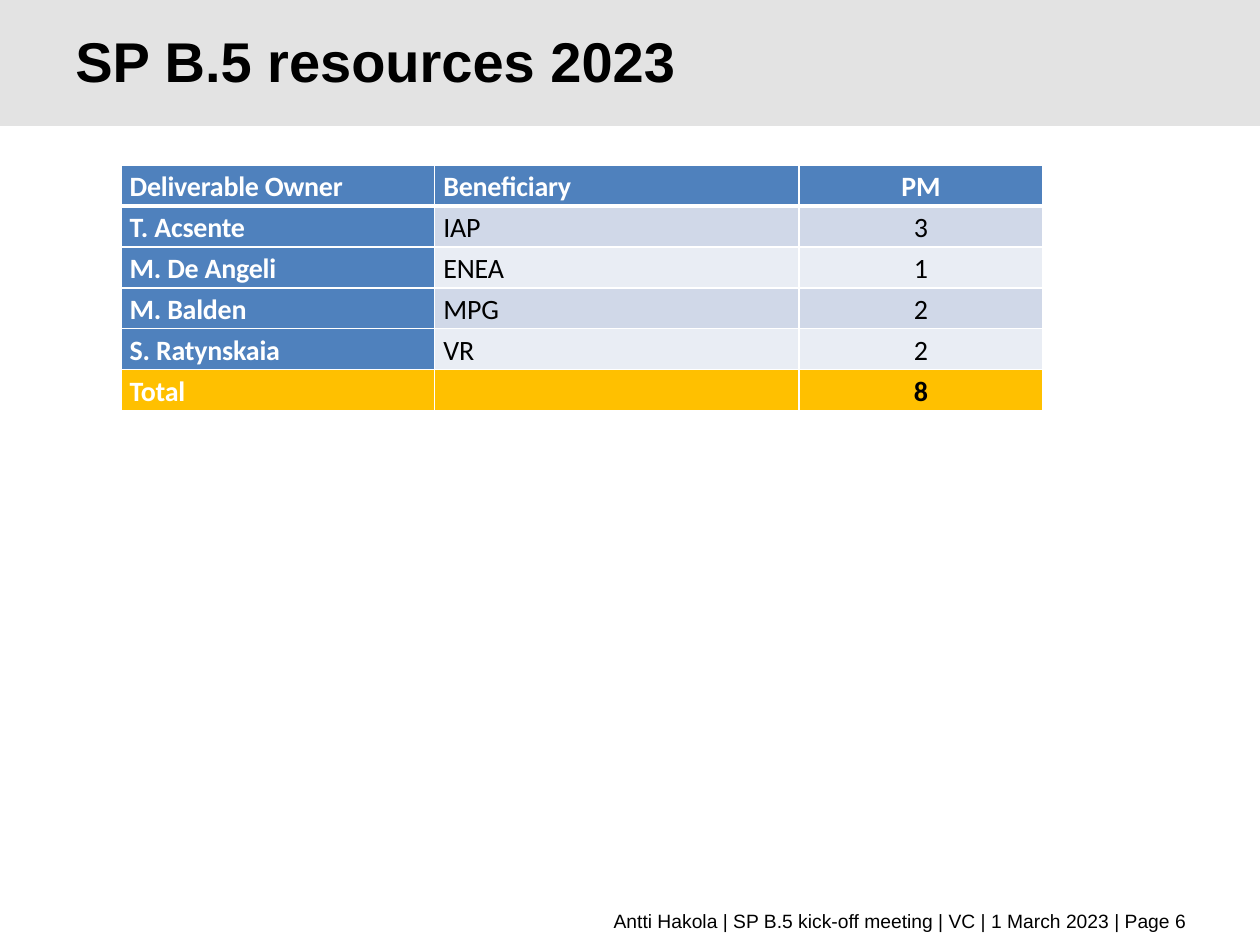
"""Build the SP B.5 resources slide with its person-month table."""
from pptx import Presentation
from pptx.dml.color import RGBColor
from pptx.enum.shapes import MSO_SHAPE
from pptx.enum.text import MSO_ANCHOR, PP_ALIGN
from pptx.oxml import parse_xml
from pptx.oxml.ns import nsdecls
from pptx.util import Inches, Pt


def color(value):
    return RGBColor.from_string(value)


def add_run(paragraph, text, font_name, size, ink, bold=False):
    run = paragraph.add_run()
    run.text = text
    run.font.name = font_name
    run.font.size = Pt(size)
    run.font.bold = bold
    run.font.color.rgb = color(ink)
    return run


presentation = Presentation()
presentation.slide_width = Inches(10)
presentation.slide_height = Inches(7.5)
slide = presentation.slides.add_slide(presentation.slide_layouts[6])

header_band = slide.shapes.add_shape(MSO_SHAPE.RECTANGLE, 0, 0, Inches(10), Inches(1))
header_band.shadow.inherit = False
header_band.fill.solid()
header_band.fill.fore_color.rgb = color("E3E3E3")
header_band.line.fill.background()

captions = [
    ("Antti Hakola | SP B.5 kick-off meeting | VC | 1 March 2023 | Page 6",
     (0.51, 7.16, 9.01, 0.29), 11, False, PP_ALIGN.RIGHT, None),
    ("SP B.5 resources 2023",
     (0.5, 0.05, 8.25, 0.95), 32, True, PP_ALIGN.LEFT, Pt(32)),
]
for text, place, size, bold, align, spacing in captions:
    caption = slide.shapes.add_textbox(*map(Inches, place)).text_frame
    caption.word_wrap = True
    caption.vertical_anchor = MSO_ANCHOR.MIDDLE
    caption.paragraphs[0].alignment = align
    caption.paragraphs[0].line_spacing = spacing
    add_run(caption.paragraphs[0], text, "Arial", size, "000000", bold)

entries = [
    ("Deliverable Owner", "Beneficiary", "PM"),
    ("T. Acsente", "IAP", "3"),
    ("M. De Angeli", "ENEA", "1"),
    ("M. Balden", "MPG", "2"),
    ("S. Ratynskaia", "VR", "2"),
    ("Total", "", "8"),
]
last = len(entries) - 1
resources = slide.shapes.add_table(
    len(entries), 3, Inches(0.96), Inches(1.31), Inches(7.32), Inches(1.95)).table
for column, width in zip(resources.columns, (2.49, 2.89, 1.94)):
    column.width = Inches(width)

for r, entry in enumerate(entries):
    for c, text in enumerate(entry):
        cell = resources.cell(r, c)
        cell.margin_left = cell.margin_right = Inches(0.07)
        cell.margin_top = cell.margin_bottom = 0

        heading = r == 0 or c == 0
        if r == last:
            shade = "FFC000"
        elif heading:
            shade = "4F81BD"
        else:
            shade = "D0D8E8" if r % 2 else "E9EDF4"

        for position, side in enumerate(("lnL", "lnR", "lnT", "lnB")):
            thick = (r == 0 and side == "lnB") or (r == 1 and side == "lnT")
            border = parse_xml(
                f'<a:{side} {nsdecls("a")} w="{Pt(3 if thick else 1)}"><a:solidFill>'
                f'<a:srgbClr val="FFFFFF"/></a:solidFill></a:{side}>')
            cell._tc.get_or_add_tcPr().insert(position, border)
        cell.fill.solid()
        cell.fill.fore_color.rgb = color(shade)

        paragraph = cell.text_frame.paragraphs[0]
        paragraph.alignment = PP_ALIGN.CENTER if c == 2 else PP_ALIGN.LEFT
        paragraph.line_spacing = 1.15
        if text:
            run = add_run(paragraph, text, "Calibri", 16,
                          "FFFFFF" if heading else "000000", heading or r == last)
            run.font._element.set("spc", "-10")
        else:
            paragraph.font.size = Pt(16)

presentation.save("out.pptx")
